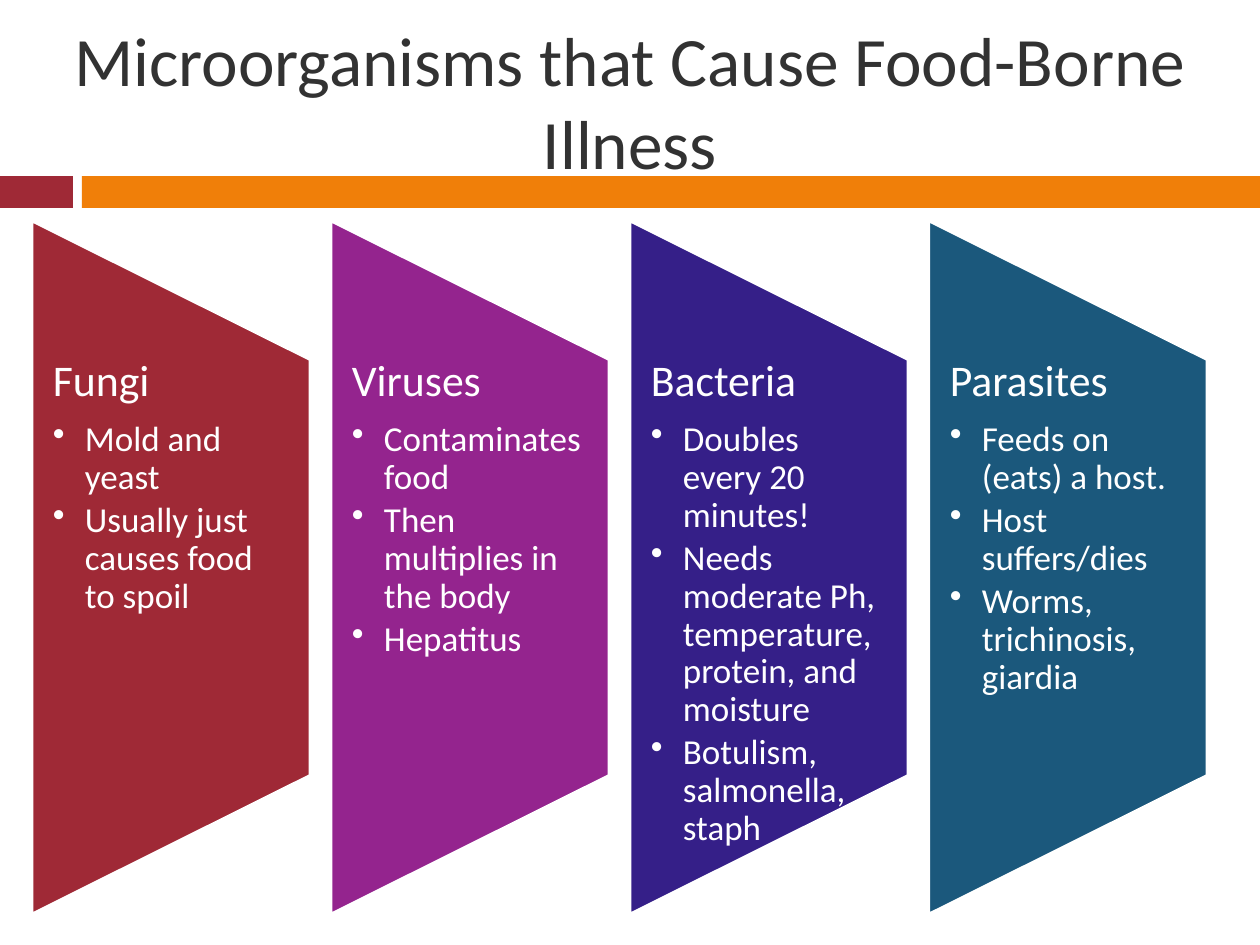
from dataclasses import dataclass

from lxml.etree import SubElement
from pptx import Presentation
from pptx.dml.color import RGBColor
from pptx.enum.shapes import MSO_SHAPE
from pptx.enum.text import MSO_ANCHOR, MSO_AUTO_SIZE, PP_ALIGN
from pptx.oxml.ns import qn
from pptx.util import Emu, Pt


@dataclass(frozen=True)
class Theme:
    font: str = "Calibri"
    ink: str = "323232"
    white: str = "FFFFFF"
    red: str = "9F2936"
    orange: str = "F07F09"
    purple: str = "94248E"
    indigo: str = "351F88"
    teal: str = "1B587C"
    title_size: float = 39.6
    heading_size: int = 25
    bullet_size: int = 20


THEME = Theme()
PANEL_LEFT, PANEL_TOP = 32, 221
PANEL_WIDTH, PANEL_HEIGHT = 278, 693
PANEL_PITCH = 299
TEXT_TOP, TEXT_HEIGHT = 359, 416
BULLET_INDENT = 32

MICROORGANISMS = [
    ("Fungi", THEME.red,
     ["Mold and yeast", "Usually just causes food to spoil"]),
    ("Viruses", THEME.purple,
     ["Contaminates food", "Then multiplies in the body", "Hepatitus"]),
    ("Bacteria", THEME.indigo,
     ["Doubles every 20 minutes!",
      "Needs moderate Ph, temperature, protein, and moisture",
      "Botulism, salmonella, staph"]),
    ("Parasites", THEME.teal,
     ["Feeds on (eats) a host.", "Host suffers/dies",
      "Worms, trichinosis, giardia"]),
]


def px(length):
    return Emu(round(length * 914400 / 126))


def add_run(paragraph, text, size, color):
    run = paragraph.add_run()
    run.text = text
    run.font.name = THEME.font
    run.font.size = Pt(size)
    run.font.color.rgb = RGBColor.from_string(color)


def add_filled(shapes, kind, box, color):
    filled = shapes.add_shape(kind, *map(px, box))
    filled.shadow.inherit = False
    filled.fill.solid()
    filled.fill.fore_color.rgb = RGBColor.from_string(color)
    filled.line.fill.background()
    return filled


def add_title(slide, text):
    title = slide.shapes.title
    title.left, title.top, title.width, title.height = map(px, (0, 32, 1260, 136))
    frame = title.text_frame
    frame.auto_size = MSO_AUTO_SIZE.NONE
    frame.vertical_anchor = MSO_ANCHOR.MIDDLE
    heading = frame.paragraphs[0]
    heading.alignment = PP_ALIGN.CENTER
    add_run(heading, text, THEME.title_size, THEME.ink)


def add_panel(shapes, left, color):
    box = (left + (PANEL_WIDTH - PANEL_HEIGHT) / 2,
           PANEL_TOP + (PANEL_HEIGHT - PANEL_WIDTH) / 2,
           PANEL_HEIGHT, PANEL_WIDTH)
    panel = add_filled(shapes, MSO_SHAPE.FLOWCHART_MANUAL_OPERATION, box, color)
    panel.rotation = 270
    panel.line.color.rgb = RGBColor.from_string(THEME.white)
    panel.line.width = Pt(1.5)


def make_bullet(paragraph):
    paragraph.level = 1
    properties = paragraph._p.get_or_add_pPr()
    properties.set("marL", str(px(BULLET_INDENT)))
    properties.set("indent", str(px(-BULLET_INDENT)))
    SubElement(properties, qn("a:buChar")).set("char", "•")


def add_description(shapes, left, name, facts):
    description = shapes.add_textbox(
        *map(px, (left, TEXT_TOP, PANEL_WIDTH, TEXT_HEIGHT)))
    frame = description.text_frame
    frame.word_wrap = True
    frame.margin_left, frame.margin_right = px(21), px(23)
    frame.margin_top = frame.margin_bottom = 0
    heading = frame.paragraphs[0]
    heading.line_spacing = 0.9
    heading.space_after = Pt(THEME.heading_size * 0.35)
    add_run(heading, name, THEME.heading_size, THEME.white)
    for fact in facts:
        bullet = frame.add_paragraph()
        bullet.line_spacing = 0.9
        bullet.space_after = Pt(THEME.bullet_size * 0.15)
        make_bullet(bullet)
        add_run(bullet, fact, THEME.bullet_size, THEME.white)


def main():
    presentation = Presentation()
    presentation.slide_width, presentation.slide_height = px(1260), px(945)
    slide = presentation.slides.add_slide(presentation.slide_layouts[5])
    add_title(slide, "Microorganisms that Cause Food-Borne Illness")
    for left, width, color in ((0, 73, THEME.red), (82, 1178, THEME.orange)):
        add_filled(slide.shapes, MSO_SHAPE.RECTANGLE, (left, 176, width, 32), color)
    columns = slide.shapes.add_group_shape().shapes
    for index, (name, color, facts) in enumerate(MICROORGANISMS):
        left = PANEL_LEFT + index * PANEL_PITCH
        add_panel(columns, left, color)
        add_description(columns, left, name, facts)
    presentation.save("out.pptx")


if __name__ == "__main__":
    main()
